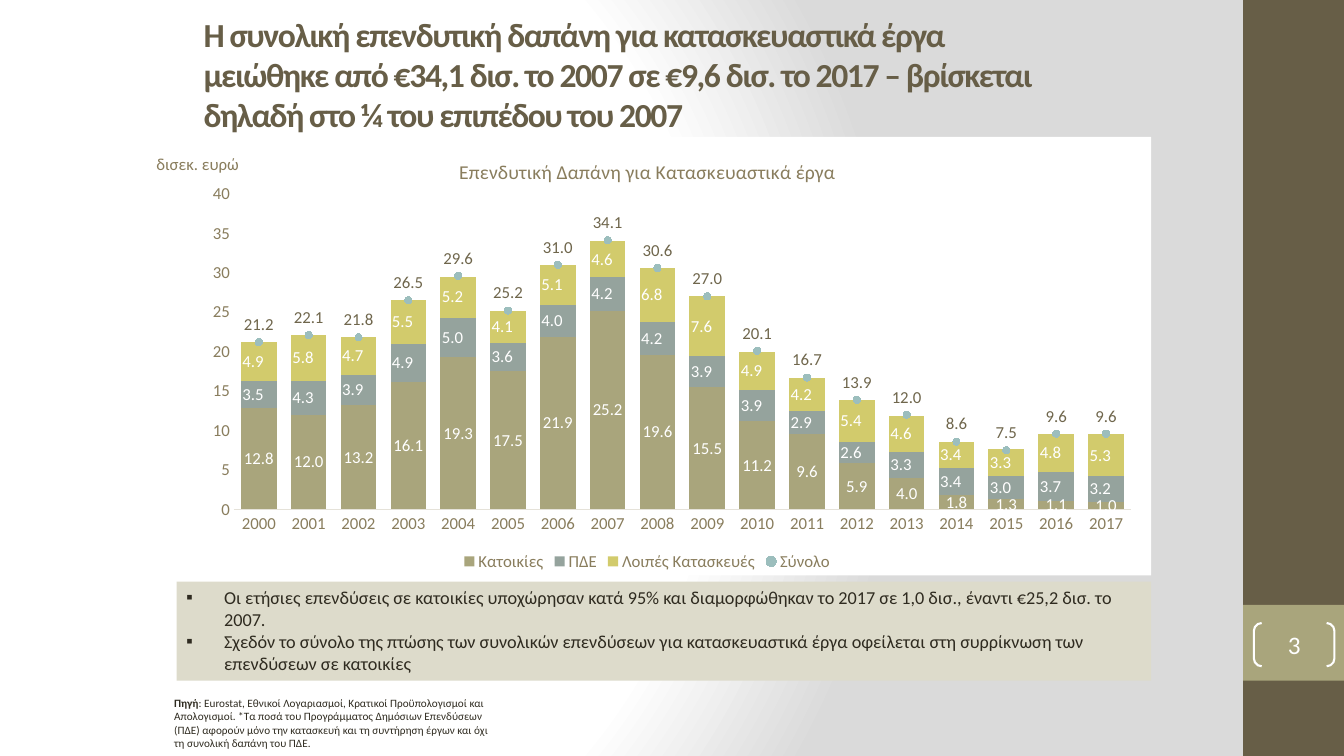
import pptx
import pptx.chart.data
import pptx.dml.color
import pptx.enum.chart
import pptx.enum.shapes
import pptx.enum.text
import pptx.oxml.ns
import pptx.oxml.xmlchemy
import pptx.util
from lxml import etree

Cm = pptx.util.Cm
Pt = pptx.util.Pt
RGBColor = pptx.dml.color.RGBColor
qn = pptx.oxml.ns.qn
OxmlElement = pptx.oxml.xmlchemy.OxmlElement
SHAPES = pptx.enum.shapes.MSO_SHAPE
MIDDLE = pptx.enum.text.MSO_ANCHOR.MIDDLE
LABELS = pptx.enum.chart.XL_LABEL_POSITION
NO_TICK = pptx.enum.chart.XL_TICK_MARK.NONE

WHITE = RGBColor(0xFF, 0xFF, 0xFF)
PALE_GREY = RGBColor(0xDA, 0xDA, 0xDA)
BROWN = RGBColor(0x67, 0x5E, 0x47)
KHAKI = RGBColor(0xA9, 0xA5, 0x7C)
SAGE = RGBColor(0x95, 0xA3, 0x9D)
LIME = RGBColor(0xD2, 0xCB, 0x6C)
AQUA = RGBColor(0x9C, 0xBE, 0xBD)
SAND = RGBColor(0xDD, 0xDB, 0xCB)
INK = RGBColor(0x2F, 0x2B, 0x20)
AXIS_TEXT = RGBColor(0x89, 0x7D, 0x5D)
AXIS_LINE = RGBColor(0xE5, 0xE2, 0xD9)
TOTAL_TEXT = RGBColor(0x6F, 0x66, 0x4C)
FONT = "Calibri"


def add_run(paragraph, text, size, color, bold=False):
    run = paragraph.add_run()
    run.text = text
    run.font.name = FONT
    run.font.size = Pt(size)
    run.font.color.rgb = color
    run.font.bold = bold
    return run


def set_layout(parent, index, **values):
    for old_layout in parent.findall(qn("c:layout")):
        parent.remove(old_layout)
    layout = OxmlElement("c:layout")
    manual = etree.SubElement(layout, qn("c:manualLayout"))
    for name, value in values.items():
        etree.SubElement(manual, qn("c:" + name)).set("val", str(value))
    parent.insert(index, layout)


prs = pptx.Presentation()
prs.slide_width = Cm(33.87)
prs.slide_height = Cm(19.05)
slide = prs.slides.add_slide(prs.slide_layouts[6])

slide.background.fill.gradient()
gradient = slide.element.find(".//" + qn("a:gradFill"))
for part in list(gradient):
    gradient.remove(part)
stops = etree.SubElement(gradient, qn("a:gsLst"))
for position, color in [(0, WHITE), (75, WHITE), (100, PALE_GREY)]:
    stop = etree.SubElement(stops, qn("a:gs"), pos=str(position * 1000))
    etree.SubElement(stop, qn("a:srgbClr"), val=str(color))
circle = etree.SubElement(gradient, qn("a:path"))
circle.set("path", "circle")
etree.SubElement(circle, qn("a:fillToRect"), l="20000", t="50000", r="100000", b="50000")

for top, height, color in [(0, 19.05, BROWN), (15.24, 1.91, KHAKI)]:
    band = slide.shapes.add_shape(SHAPES.RECTANGLE, Cm(31.33), Cm(top), Cm(2.54), Cm(height))
    band.shadow.inherit = False
    band.fill.solid()
    band.fill.fore_color.rgb = color
    band.line.fill.background()

page_number = slide.shapes.add_shape(SHAPES.DOUBLE_BRACKET, Cm(31.6), Cm(15.7), Cm(2.03), Cm(1.09))
page_number.shadow.inherit = False
page_number.adjustments[0] = 0.18
page_number.fill.background()
page_number.line.color.rgb = WHITE
page_number.line.width = Pt(1.5)
frame = page_number.text_frame
frame.margin_left = frame.margin_right = frame.margin_top = frame.margin_bottom = 0
frame.vertical_anchor = MIDDLE
frame.paragraphs[0].alignment = pptx.enum.text.PP_ALIGN.CENTER
add_run(frame.paragraphs[0], "3", 18, WHITE)

headline = slide.shapes.add_textbox(Cm(4.88), Cm(0.28), Cm(22.43), Cm(3.18)).text_frame
headline.word_wrap = True
headline.vertical_anchor = MIDDLE
headline_run = add_run(
    headline.paragraphs[0],
    "Η συνολική επενδυτική δαπάνη για κατασκευαστικά έργα μειώθηκε από €34,1 δισ. "
    "το 2007 σε €9,6 δισ. το 2017 – βρίσκεται δηλαδή στο ¼ του επιπέδου του 2007",
    24, BROWN, True)
headline_run.font._element.set("spc", "-100")

source_note = slide.shapes.add_textbox(Cm(4.14), Cm(17.42), Cm(8.43), Cm(1.63)).text_frame
source_note.word_wrap = True
add_run(source_note.paragraphs[0], "Πηγή", 8, INK, True)
add_run(
    source_note.paragraphs[0],
    ": Eurostat, Εθνικοί Λογαριασμοί, Κρατικοί Προϋπολογισμοί και Απολογισμοί. "
    "*Τα ποσά του Προγράμματος Δημόσιων Επενδύσεων (ΠΔΕ) αφορούν μόνο την κατασκευή "
    "και τη συντήρηση έργων και όχι τη συνολική δαπάνη του ΠΔΕ.",
    8, INK)

findings = slide.shapes.add_shape(SHAPES.RECTANGLE, Cm(4.45), Cm(14.66), Cm(24.56), Cm(2.49))
findings.shadow.inherit = False
findings.fill.solid()
findings.fill.fore_color.rgb = SAND
findings.line.fill.background()
findings.text_frame.word_wrap = True
findings.text_frame.vertical_anchor = pptx.enum.text.MSO_ANCHOR.TOP
for number, finding in enumerate([
    "Οι ετήσιες επενδύσεις σε κατοικίες υποχώρησαν κατά 95% και διαμορφώθηκαν "
    "το 2017 σε 1,0 δισ., έναντι €25,2 δισ. το 2007.",
    "Σχεδόν το σύνολο της πτώσης των συνολικών επενδύσεων για κατασκευαστικά έργα "
    "οφείλεται στη συρρίκνωση των επενδύσεων σε κατοικίες",
]):
    paragraph = findings.text_frame.add_paragraph() if number else findings.text_frame.paragraphs[0]
    paragraph.alignment = pptx.enum.text.PP_ALIGN.LEFT
    add_run(paragraph, finding, 13, INK)
    properties = paragraph._p.get_or_add_pPr()
    properties.set("marL", str(Cm(0.95)))
    properties.set("indent", str(-Cm(0.95)))
    etree.SubElement(properties, qn("a:buFont"), typeface=FONT)
    etree.SubElement(properties, qn("a:buChar"), char="▪")

PLAIN_FORMAT = "#,##0.0"
PADDED_FORMAT = '_-* #,##0.0\\ _€_-;\\-* #,##0.0\\ _€_-;_-* "-"??\\ _€_-;_-@_-'
spending = [
    ("Κατοικίες", KHAKI, WHITE, PLAIN_FORMAT,
     [12.8, 12, 13.2, 16.1, 19.3, 17.5, 21.9, 25.2, 19.6, 15.5, 11.2, 9.6, 5.9, 4, 1.8, 1.3, 1.1, 1]),
    ("ΠΔΕ", SAGE, WHITE, PADDED_FORMAT,
     [3.5, 4.3, 3.9, 4.9, 5, 3.6, 4, 4.2, 4.2, 3.9, 3.9, 2.9, 2.6, 3.3, 3.4, 3, 3.7, 3.2]),
    ("Λοιπές Κατασκευές", LIME, WHITE, PADDED_FORMAT,
     [4.9, 5.8, 4.7, 5.5, 5.2, 4.1, 5.1, 4.6, 6.8, 7.6, 4.9, 4.2, 5.4, 4.6, 3.4, 3.3, 4.8, 5.3]),
    ("Σύνολο", AQUA, TOTAL_TEXT, PLAIN_FORMAT,
     [21.2, 22.1, 21.8, 26.5, 29.6, 25.2, 31, 34.1, 30.6, 27, 20.1, 16.7, 13.9, 12, 8.6, 7.5, 9.6, 9.6]),
]
chart_data = pptx.chart.data.CategoryChartData()
chart_data.categories = [str(year) for year in range(2000, 2018)]
for name, color, label_color, number_format, values in spending:
    chart_data.add_series(name, values)
chart = slide.shapes.add_chart(
    pptx.enum.chart.XL_CHART_TYPE.COLUMN_STACKED,
    Cm(3.61), Cm(3.45), Cm(25.4), Cm(11.05), chart_data).chart
chart.font.name = FONT
chart.font.size = Pt(12)
chart.font.color.rgb = INK

columns = chart.plots[0]
columns.gap_width = 40
columns.overlap = 100
columns.vary_by_categories = False
column_chart = columns._element
total_series = column_chart.findall(qn("c:ser"))[-1]
line_chart = OxmlElement("c:lineChart")
etree.SubElement(line_chart, qn("c:grouping"), val="standard")
etree.SubElement(line_chart, qn("c:varyColors"), val="0")
line_chart.append(total_series)
for invert in total_series.findall(qn("c:invertIfNegative")):
    total_series.remove(invert)
etree.SubElement(line_chart, qn("c:marker"), val="1")
for axis_id in column_chart.findall(qn("c:axId")):
    etree.SubElement(line_chart, qn("c:axId"), val=axis_id.get("val"))
column_chart.addnext(line_chart)

drawn_series = [series for plot in chart.plots for series in plot.series]
for series, (name, color, label_color, number_format, values) in zip(drawn_series, spending):
    is_total = name == "Σύνολο"
    if is_total:
        series.smooth = False
        series.format.line.fill.background()
        series.marker.style = pptx.enum.chart.XL_MARKER_STYLE.CIRCLE
        series.marker.size = 5
        series.marker.format.line.color.rgb = color
        marked = series.marker.format
    else:
        marked = series.format
    marked.fill.solid()
    marked.fill.fore_color.rgb = color
    labels = series.data_labels
    labels.show_value = True
    labels.position = LABELS.ABOVE if is_total else LABELS.CENTER
    labels.number_format = number_format
    labels.number_format_is_linked = False
    labels.font.name = FONT
    labels.font.size = Pt(12)
    labels.font.color.rgb = label_color

years, amounts = chart.category_axis, chart.value_axis
amounts.minimum_scale, amounts.maximum_scale, amounts.major_unit = 0, 40, 5
amounts.has_major_gridlines = False
amounts.tick_labels.number_format = "#,##0"
amounts.tick_labels.number_format_is_linked = False
amounts.format.line.fill.background()
years.format.line.color.rgb = AXIS_LINE
years.format.line.width = Pt(0.75)
for axis in (years, amounts):
    axis.major_tick_mark = axis.minor_tick_mark = NO_TICK

chart.has_legend = True
chart.legend.position = pptx.enum.chart.XL_LEGEND_POSITION.BOTTOM
chart.legend.include_in_layout = False
for font in (years.tick_labels.font, amounts.tick_labels.font, chart.legend.font):
    font.name = FONT
    font.size = Pt(12)
    font.color.rgb = AXIS_TEXT

for title, text, size, x, y in [
    (chart.chart_title, "Επενδυτική Δαπάνη για Κατασκευαστικά έργα", 14, 0.31, 0.04),
    (amounts.axis_title, "δισεκ. ευρώ", 12, 0.01, 0.03),
]:
    add_run(title.text_frame.paragraphs[0], text, size, AXIS_TEXT)
    title.text_frame._txBody.find(qn("a:bodyPr")).set("rot", "0")
    set_layout(title._element, 1, xMode="edge", yMode="edge", x=x, y=y)

chart_space = chart.element
set_layout(chart_space.find(".//" + qn("c:plotArea")), 0, layoutTarget="inner",
           xMode="edge", yMode="edge", x=0.09, y=0.13, w=0.89, h=0.72)
panel = OxmlElement("c:spPr")
panel_fill = etree.SubElement(panel, qn("a:solidFill"))
etree.SubElement(panel_fill, qn("a:srgbClr"), val=str(WHITE))
etree.SubElement(etree.SubElement(panel, qn("a:ln")), qn("a:noFill"))
chart_space.find(qn("c:chart")).addnext(panel)

prs.save("out.pptx")
